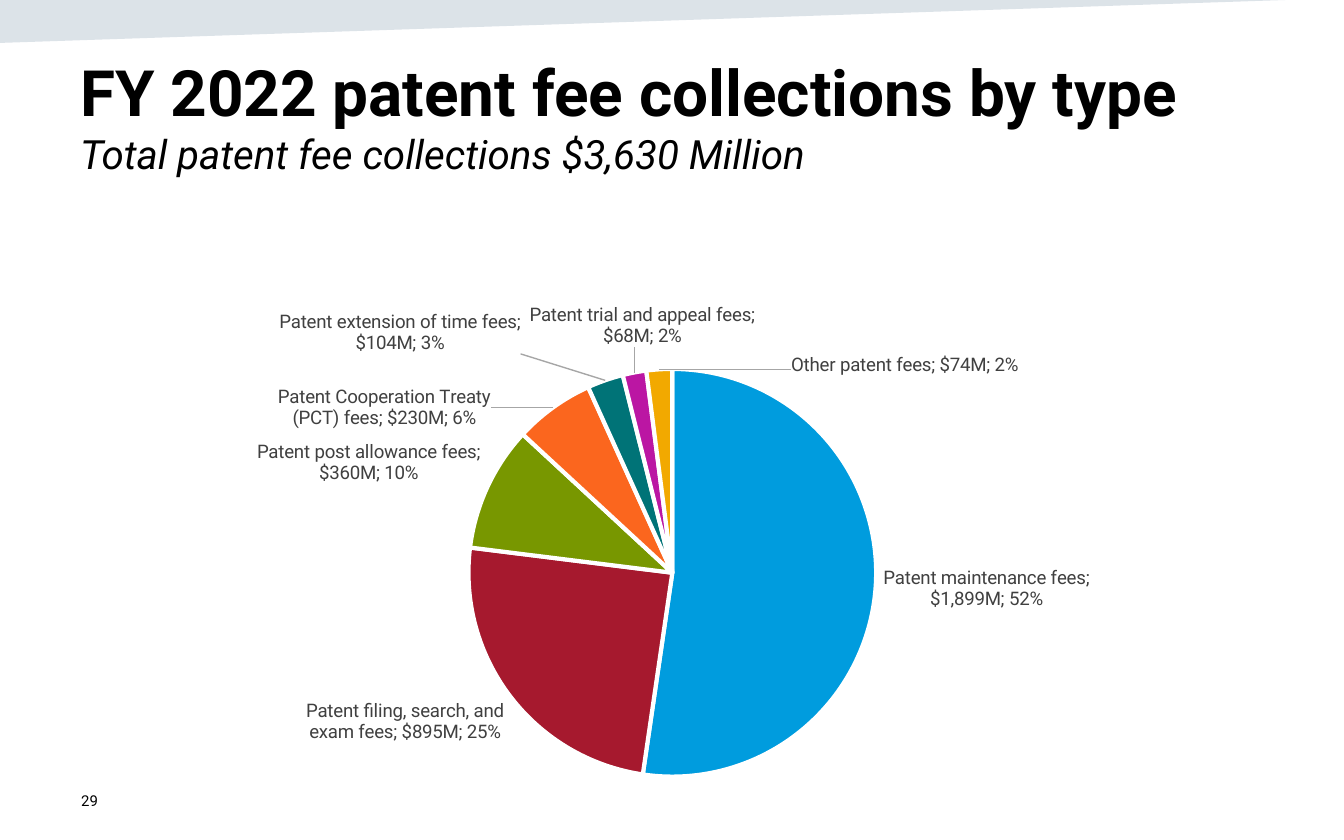
from copy import deepcopy
from dataclasses import dataclass

from pptx import Presentation
from pptx.chart.data import CategoryChartData as ChartData
from pptx.dml.color import RGBColor as RGB
from pptx.enum.chart import XL_CHART_TYPE as CT, XL_LABEL_POSITION as LP
from pptx.enum.text import MSO_ANCHOR as ANCHOR
from pptx.oxml import parse_xml
from pptx.oxml.ns import nsdecls, qn
from pptx.util import Emu, Pt


@dataclass(frozen=True)
class Theme:
    """Colours, font and type sizes of the slide."""
    font: str = "Roboto"
    ink: str = "000000"
    label: str = "404040"
    leader: str = "A6A6A6"
    paper: str = "FFFFFF"
    band: str = "164469"
    title: float = 34.2
    subtitle: float = 21.6
    small: int = 8
    chart: int = 10
    border: float = 2.25


T = Theme()
W, H = 1344, 840
MONEY = '"$"#,##0"M"'
FEES = [
    ("Patent maintenance fees", 1899, "009CDE", None),
    ("Patent filing, search, and exam fees", 895, "A6192E", None),
    ("Patent post allowance fees", 360, "789700", None),
    ("Patent Cooperation Treaty (PCT) fees", 230, "FB661E", (-58, 28)),
    ("Patent extension of time fees", 104, "007377", (-82, -19)),
    ("Patent trial and appeal fees", 68, "BB16A3", (122, -18)),
    ("Other patent fees", 74, "F2A900", (246, 14)),
]


def px(n):
    """Turn slide pixels into EMU."""
    return Emu(round(n * 914400 / 134.4))


def style(font, color, **values):
    """Set a font's face, colour and other format values."""
    font.color.rgb = RGB.from_string(color)
    for key, value in {"name": T.font, **values}.items():
        setattr(font, key, value)


def text_box(s, box, runs, anchor):
    """Add a text box with one line for each (text, format) pair."""
    tf = s.shapes.add_textbox(*map(px, box)).text_frame
    tf.word_wrap, tf.vertical_anchor = True, anchor
    p = tf.paragraphs[0]
    for i, (text, values) in enumerate(runs):
        if i:
            p.add_line_break()
        r = p.add_run()
        r.text = text
        style(r.font, T.ink, **values)


def band(s, box):
    """Draw the pale wedge along the top edge."""
    x, y, w, h = box
    fb = s.shapes.build_freeform(px(x), px(y))
    fb.add_line_segments([(px(x), px(y + h)), (px(x + w), px(y))])
    sp = fb.convert_to_shape()
    sp.shadow.inherit = False
    sp.fill.solid()
    sp.fill.fore_color.rgb = RGB.from_string(T.band)
    sp.line.fill.background()
    color = sp.fill._xPr.find(".//" + qn("a:srgbClr"))
    color.append(parse_xml(f'<a:alpha {nsdecls("a")} val="15000"/>'))


def layout(**values):
    """Make a manual chart layout element."""
    parts = "".join(f'<c:{k} val="{v}"/>' for k, v in values.items())
    return parse_xml(f'<c:layout {nsdecls("c")}><c:manualLayout>{parts}'
                     '</c:manualLayout></c:layout>')


def place_labels(labels, w, h):
    """Move the labels of the thin slices and draw their leader lines."""
    root = labels._element
    sep = parse_xml(f'<c:separator {nsdecls("c")}>; </c:separator>')
    root.find(qn("c:showBubbleSize")).addnext(sep)
    shared = [el for el in root if el.tag != qn("c:showLeaderLines")]
    moved = [(i, fee[3]) for i, fee in enumerate(FEES) if fee[3]]
    for n, (i, (dx, dy)) in enumerate(moved):
        lbl = parse_xml(f'<c:dLbl {nsdecls("c")}><c:idx val="{i}"/></c:dLbl>')
        lbl.append(layout(x=round(dx / w, 4), y=round(dy / h, 4)))
        lbl.extend(deepcopy(shared))
        root.insert(n, lbl)
    root.find(qn("c:showLeaderLines")).addnext(parse_xml(
        f'<c:leaderLines {nsdecls("c", "a")}><c:spPr><a:ln w="9525"><a:solidFill>'
        f'<a:srgbClr val="{T.leader}"/></a:solidFill></a:ln></c:spPr></c:leaderLines>'))


def pie(s, box):
    """Add the pie chart of fee types."""
    data = ChartData(number_format=MONEY)
    data.categories = [fee[0] for fee in FEES]
    data.add_series("Series 1", [fee[1] for fee in FEES])
    chart = s.shapes.add_chart(CT.PIE, *map(px, box), data).chart
    chart.has_title = chart.has_legend = False
    style(chart.font, T.ink, size=Pt(T.chart))
    area = chart._chartSpace.find(".//" + qn("c:plotArea"))
    for old in area.findall(qn("c:layout")):
        area.remove(old)
    area.insert(0, layout(layoutTarget="inner", xMode="edge", yMode="edge",
                          x=0.331, y=0.19, w=0.337, h=0.795))
    series = chart.plots[0].series[0]
    for i, fee in enumerate(FEES):
        fmt = series.points[i].format
        fmt.fill.solid()
        fmt.fill.fore_color.rgb = RGB.from_string(fee[2])
        fmt.line.color.rgb = RGB.from_string(T.paper)
        fmt.line.width = Pt(T.border)
    labels = series.data_labels
    style(labels.font, T.label, size=Pt(T.chart))
    values = dict(number_format=MONEY, number_format_is_linked=True,
                  position=LP.OUTSIDE_END, show_category_name=True,
                  show_value=True, show_percentage=True)
    for key, value in values.items():
        setattr(labels, key, value)
    place_labels(labels, *box[2:])


def main():
    """Build and save the slide."""
    prs = Presentation()
    prs.slide_width, prs.slide_height = px(W), px(H)
    s = prs.slides.add_slide(prs.slide_layouts[6])
    band(s, (0, -2, 1347, 45))
    text_box(s, (68, 779, 302, 44), [("29", dict(size=Pt(T.small)))], ANCHOR.MIDDLE)
    text_box(s, (67, 46, 1210, 140), [
        ("FY 2022 patent fee collections by type", dict(size=Pt(T.title), bold=True)),
        ("Total patent fee collections $3,630 Million",
         dict(size=Pt(T.subtitle), bold=False, italic=True)),
    ], ANCHOR.TOP)
    pie(s, (68, 271, 1210, 514))
    prs.save("out.pptx")


if __name__ == "__main__":
    main()
